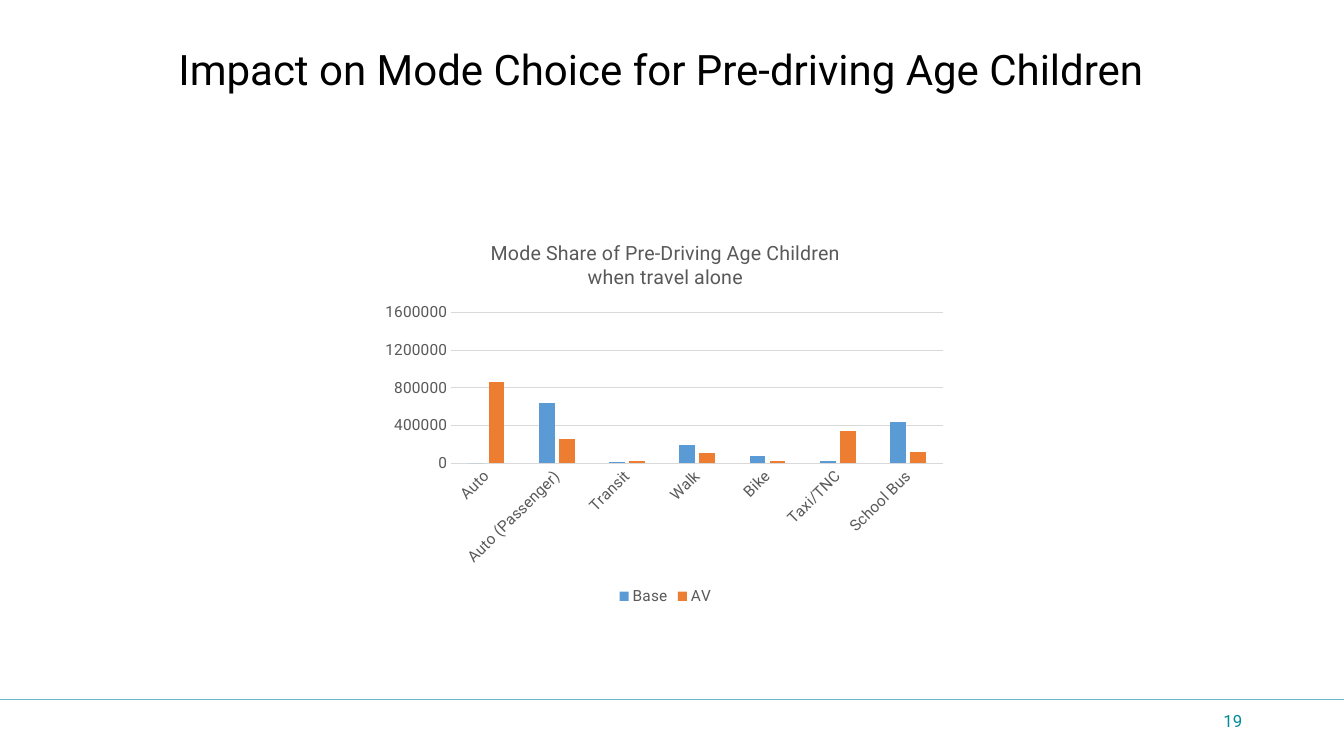
from lxml import etree
from pptx import Presentation
from pptx.chart.data import CategoryChartData
from pptx.dml.color import RGBColor
from pptx.enum.chart import XL_CHART_TYPE as ChartType, XL_LEGEND_POSITION as LegendPosition, XL_TICK_MARK as TickMark
from pptx.enum.shapes import MSO_CONNECTOR as Connector
from pptx.enum.text import MSO_ANCHOR as Anchor, PP_ALIGN as Align
from pptx.oxml.ns import qn
from pptx.util import Inches, Pt

GREY, GRID = "595959", "D9D9D9"


def color(value):
    return RGBColor.from_string(value)


def write(frame, text, size, fill, align=Align.LEFT):
    """Fill a text frame, one paragraph for each line of text."""
    frame.text = text
    for para in frame.paragraphs:
        para.alignment = align
        font = para.runs[0].font
        font.name, font.size, font.bold = "Roboto", Pt(size), False
        font.color.rgb = color(fill)


deck = Presentation()
deck.slide_width, deck.slide_height = Inches(13.33), Inches(7.5)
page = deck.slides.add_slide(deck.slide_layouts[5])

# Footer rule
rule = page.shapes.add_connector(Connector.STRAIGHT, 0, Inches(6.94), Inches(13.33), Inches(6.94))
rule.line.color.rgb = color("6AB9C4")
rule.line.width = Pt(1)
etree.SubElement(rule._element.spPr, qn("a:effectLst"))

# Title
title = page.shapes.title
title.left, title.top, title.width, title.height = map(Inches, (1.67, 0.17, 10, 1.09))
write(title.text_frame, "Impact on Mode Choice for Pre-driving Age Children", 30, "000000")
title.text_frame.vertical_anchor = Anchor.MIDDLE
title.text_frame.paragraphs[0].line_spacing = 0.9

# Page number
number = page.shapes.add_textbox(Inches(9.42), Inches(6.95), Inches(3), Inches(0.4))
number.text_frame.word_wrap = True
number.text_frame.vertical_anchor = Anchor.MIDDLE
write(number.text_frame, "19", 12, "008C99", align=Align.RIGHT)

# Mode share chart
data = CategoryChartData()
data.categories = ["Auto", "Auto (Passenger)", "Transit", "Walk", "Bike", "Taxi/TNC", "School Bus"]
data.add_series("Base", [0, 640000, 10000, 190000, 70000, 20000, 440000])
data.add_series("AV", [860000, 260000, 20000, 110000, 20000, 340000, 120000])
chart = page.shapes.add_chart(
    ChartType.COLUMN_CLUSTERED, Inches(3.73), Inches(2.22), Inches(5.74), Inches(3.83), data).chart
chart.font.name, chart.font.size = "Roboto", Pt(10)
chart.has_title = True
write(chart.chart_title.text_frame, "Mode Share of Pre-Driving Age Children\nwhen travel alone",
      14, GREY, align=Align.CENTER)
chart.chart_title.include_in_layout = False

chart.has_legend = True
legend = chart.legend
legend.position = LegendPosition.BOTTOM
legend.include_in_layout = False

plot = chart.plots[0]
plot.gap_width, plot.overlap, plot.vary_by_categories = 219, -27, False
for series, fill in zip(plot.series, ("5B9BD5", "ED7D31")):
    series.format.fill.solid()
    series.format.fill.fore_color.rgb = color(fill)
    series.invert_if_negative = False

modes, trips = chart.category_axis, chart.value_axis
for axis in (modes, trips):
    axis.major_tick_mark = axis.minor_tick_mark = TickMark.NONE
for font in (modes.tick_labels.font, trips.tick_labels.font, legend.font):
    font.name, font.size = "Roboto", Pt(11)
    font.color.rgb = color(GREY)
trips.minimum_scale, trips.maximum_scale, trips.major_unit = 0, 1600000, 400000
trips.format.line.fill.background()
for line in (modes.format.line, trips.major_gridlines.format.line):
    line.color.rgb = color(GRID)
    line.width = Pt(0.75)

# Slanted mode labels
modes._element.find(qn("c:txPr")).find(qn("a:bodyPr")).set("rot", "-2700000")

# Fixed place of the plot, as shares of the chart
plot_area = chart._chartSpace.chart.plotArea
for old in plot_area.findall(qn("c:layout")):
    plot_area.remove(old)
layout = etree.Element(qn("c:layout"))
plot_area.insert(0, layout)
manual = etree.SubElement(layout, qn("c:manualLayout"))
for tag, value in (("layoutTarget", "inner"), ("xMode", "edge"), ("yMode", "edge"),
                   ("x", "0.13"), ("y", "0.23"), ("w", "0.85"), ("h", "0.39")):
    etree.SubElement(manual, qn(f"c:{tag}")).set("val", value)

deck.save("out.pptx")
